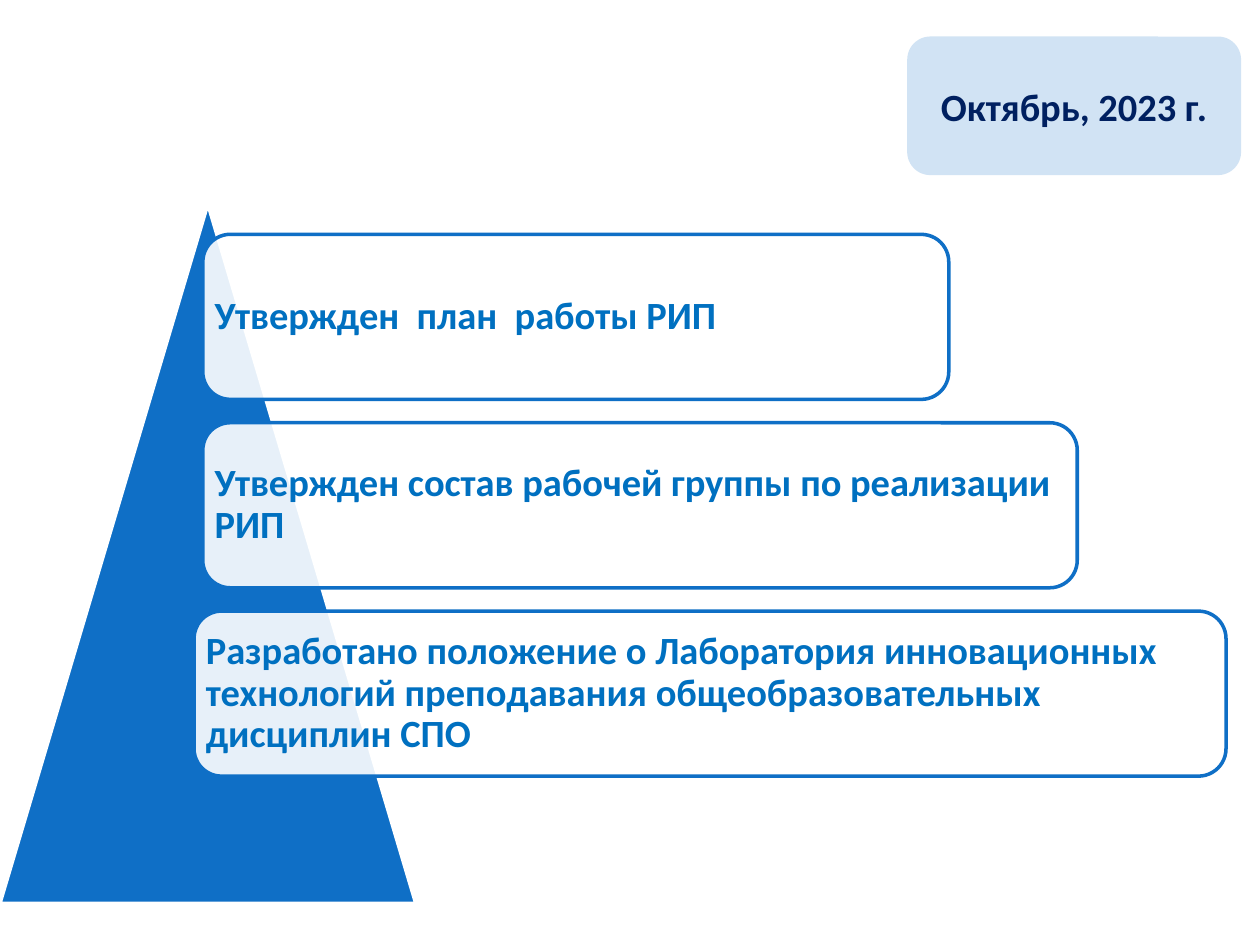
from lxml import etree
from pptx import Presentation
from pptx.dml.color import RGBColor
from pptx.enum.shapes import MSO_SHAPE
from pptx.enum.text import MSO_ANCHOR, PP_ALIGN
from pptx.oxml.ns import qn
from pptx.util import Inches, Pt

ROUND, PEAK = MSO_SHAPE.ROUNDED_RECTANGLE, MSO_SHAPE.ISOSCELES_TRIANGLE
MIDDLE = MSO_ANCHOR.MIDDLE
LEFT, CENTER = PP_ALIGN.LEFT, PP_ALIGN.CENTER

# Content
DATE = "Октябрь, 2023 г."
STEPS = [  # text, left, width
    ("Утвержден  план  работы РИП", 1.61, 5.92),
    ("Утвержден состав рабочей группы по реализации РИП", 1.61, 6.94),
    ("Разработано положение о Лаборатория инновационных технологий "
     "преподавания общеобразовательных дисциплин СПО", 1.54, 8.19),
]
COLORS = {"blue": "0F6FC6", "white": "FFFFFF", "navy": "002060", "text": "0070C0"}
TOP, PITCH, HEIGHT = 1.86, 1.495, 1.31


def color(name):
    return RGBColor.from_string(COLORS[name])


def add_shape(slide, kind, box, fill, line=None, alpha=100):
    shape = slide.shapes.add_shape(kind, *map(Inches, box))
    shape.shadow.inherit = False
    shape.fill.solid()
    shape.fill.fore_color.rgb = color(fill)
    if alpha < 100:
        tint = shape.fill._xPr.find(qn("a:solidFill"))[0]
        etree.SubElement(tint, qn("a:alpha"), val=str(alpha * 1000))
    if line:
        shape.line.color.rgb = color(line)
        shape.line.width = Pt(2)
    else:
        shape.line.fill.background()
    return shape


def write(shape, text, tone, align):
    frame = shape.text_frame
    frame.word_wrap = True
    frame.vertical_anchor = MIDDLE
    par = frame.paragraphs[0]
    par.text = text
    par.alignment = align
    font = par.font
    font.name, font.size, font.bold = "Calibri", Pt(22), True
    font.color.rgb = color(tone)
    return frame


def main():
    deck = Presentation()
    deck.slide_width, deck.slide_height = Inches(10), Inches(7.5)
    slide = deck.slides.add_slide(deck.slide_layouts[6])

    # Date badge
    badge = add_shape(slide, ROUND, (7.2, 0.29, 2.65, 1.1), "blue", alpha=19)
    write(badge, DATE, "navy", CENTER)

    # Pyramid behind the steps
    add_shape(slide, PEAK, (0, 1.62, 3.3, 5.55), "blue", "white")

    # Steps; the rounded corners already add to the small margins
    for i, (text, left, width) in enumerate(STEPS):
        box = (left, TOP + i * PITCH, width, HEIGHT)
        card = add_shape(slide, ROUND, box, "white", "blue", 90)
        frame = write(card, text, "text", LEFT)
        frame.margin_left = frame.margin_right = Inches(0.03)
        frame.margin_top = frame.margin_bottom = Inches(0.03)
        frame.paragraphs[0].line_spacing = 0.9

    deck.save("out.pptx")


if __name__ == "__main__":
    main()
